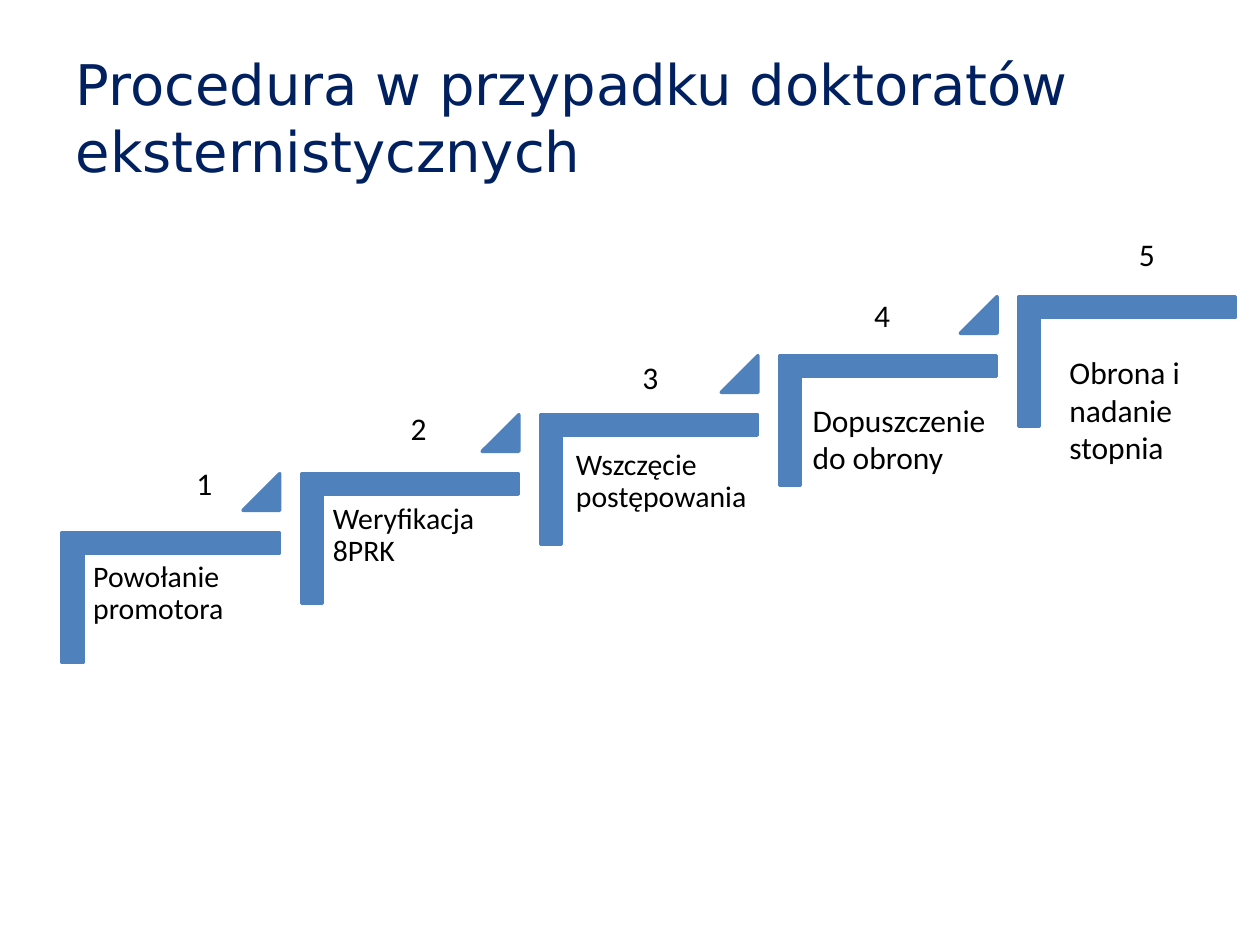
from pptx import Presentation
from pptx.dml.color import RGBColor
from pptx.enum.shapes import MSO_SHAPE
from pptx.enum.text import MSO_ANCHOR, PP_ALIGN
from pptx.util import Cm, Pt

NAVY = RGBColor(0x00, 0x20, 0x60)
BLUE = RGBColor(0x4F, 0x81, 0xBD)
BLACK = RGBColor(0x00, 0x00, 0x00)

CORNER = MSO_SHAPE.from_xml("corner")
STEPS = 5
STEP_X, STEP_Y = 4.82, -1.19

prs = Presentation()
prs.slide_width, prs.slide_height = Cm(25.4), Cm(19.05)
s = prs.slides.add_slide(prs.slide_layouts[5])


def add_part(kind, x, y, w, h):
    """Add a solid blue part of the staircase."""
    sp = s.shapes.add_shape(kind, Cm(x), Cm(y), Cm(w), Cm(h))
    sp.shadow.inherit = False
    sp.fill.solid()
    sp.fill.fore_color.rgb = BLUE
    sp.line.color.rgb = BLUE
    sp.line.width = Pt(2)
    return sp


def add_text(lines, x, y, w, h, size=18, wrap=False):
    """Add a text box with one paragraph per line."""
    sp = s.shapes.add_textbox(Cm(x), Cm(y), Cm(w), Cm(h))
    tf = sp.text_frame
    tf.word_wrap = wrap
    for i, line in enumerate(lines):
        p = tf.paragraphs[0] if i == 0 else tf.add_paragraph()
        r = p.add_run()
        r.text = line
        r.font.name = "Calibri"
        r.font.size = Pt(size)
        r.font.color.rgb = BLACK
    return tf


# Title
title = s.shapes.title
title.left, title.top, title.width, title.height = Cm(1.27), Cm(0.76), Cm(22.86), Cm(3.18)
tf = title.text_frame
tf.word_wrap = True
tf.vertical_anchor = MSO_ANCHOR.MIDDLE
p = tf.paragraphs[0]
p.alignment = PP_ALIGN.LEFT
r = p.add_run()
r.text = "Procedura w przypadku doktoratów eksternistycznych"
r.font.name = "DejaVu Sans"
r.font.size = Pt(32)
r.font.color.rgb = NAVY

# Staircase: a corner for each step, a triangle between steps
for i in range(STEPS):
    dx, dy = i * STEP_X, i * STEP_Y
    corner = add_part(CORNER, 2.13 + dx, 9.86 + dy, 2.62, 4.37)
    corner.rotation = 90
    corner.adjustments[0] = corner.adjustments[1] = 0.161
    if i < STEPS - 1:
        triangle = add_part(MSO_SHAPE.ISOSCELES_TRIANGLE, 4.9 + dx, 9.55 + dy, 0.74, 0.74)
        triangle.adjustments[0] = 1

# Labels of the first three steps
for label, x, y in [
    ("Powołanie promotora", 1.7, 11.15),
    ("Weryfikacja 8PRK", 6.53, 9.98),
    ("Wszczęcie postępowania", 11.43, 8.89),
]:
    tf = add_text([label], x, y, 3.94, 3.45, size=17, wrap=True)
    tf.margin_left = tf.margin_right = tf.margin_top = tf.margin_bottom = Cm(0.18)
    tf.paragraphs[0].line_spacing = 0.9

# Labels of the last two steps
add_text(["Dopuszczenie", "do obrony"], 16.13, 7.95, 4.19, 1.8)
add_text(["Obrona i", "nadanie", "stopnia"], 21.31, 6.99, 2.84, 2.57)

# Step numbers
for n, (x, y) in enumerate(
    [(3.71, 9.22), (8.03, 8.13), (12.7, 7.09), (17.37, 5.84), (22.71, 4.62)], start=1
):
    add_text([str(n)], x, y, 0.84, 1.02)

prs.save("out.pptx")
